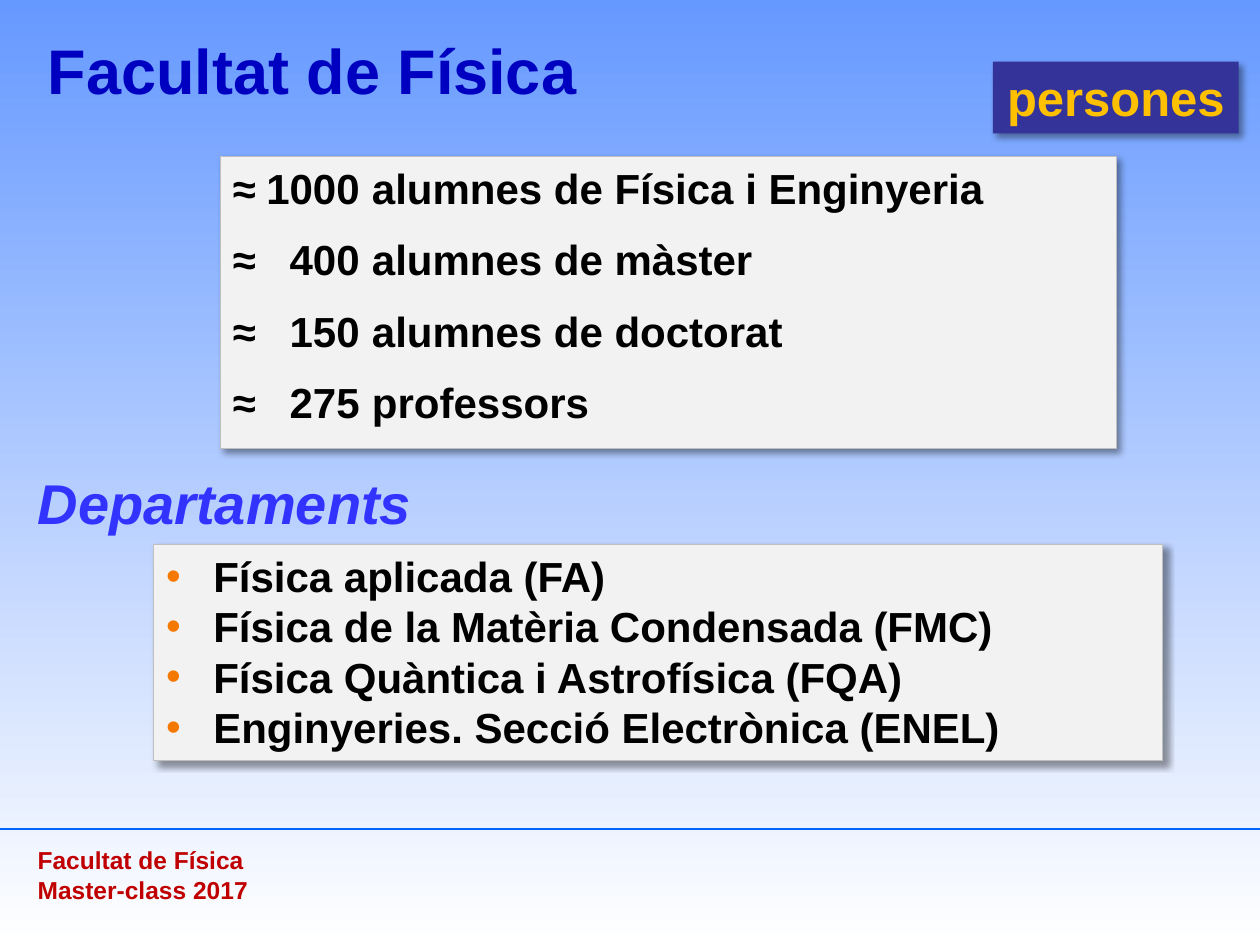
import pptx
import pptx.dml.color
import pptx.enum.shapes
import pptx.enum.text
import pptx.oxml
import pptx.oxml.ns
import pptx.util
from lxml import etree

Pt = pptx.util.Pt
ALIGN = pptx.enum.text.PP_ALIGN
NS = pptx.oxml.ns.nsdecls("a")
COLORS = {
    "sky": "6699FF", "white": "FFFFFF", "rule": "0066FF", "footer": "C00000",
    "title": "0000C0", "heading": "3333FF", "panel": "F2F2F2",
    "border": "BFBFBF", "text": "000000", "bullet": "F57900",
    "tag": "333399", "tag_text": "FFC000",
}
SHADOW = (
    f'<a:effectLst {NS}><a:outerShdw blurRad="{Pt(4)}" dist="{Pt(3)}" '
    'dir="2700000" algn="tl" rotWithShape="0"><a:srgbClr val="000000">'
    '<a:alpha val="40000"/></a:srgbClr></a:outerShdw></a:effectLst>'
)
BULLET = (
    f'<a:buClr {NS}><a:srgbClr val="{COLORS["bullet"]}"/></a:buClr>',
    f'<a:buFont {NS} typeface="Arial"/>',
    f'<a:buChar {NS} char="•"/>',
)
COUNT_TABS = (
    f'<a:tabLst {NS}><a:tab pos="{Pt(72.5)}" algn="r"/>'
    f'<a:tab pos="{Pt(79.5)}" algn="l"/></a:tabLst>',
)


def rgb(name):
    return pptx.dml.color.RGBColor.from_string(COLORS[name])


def write(shape, lines, size, color, italic=False, align=ALIGN.LEFT,
          gap=0, indent=0, extras=(), wrap=True):
    """Fill a shape with bold lines; extras are bullet or tab elements."""
    frame = shape.text_frame
    frame.text = "\n".join(lines)
    frame.word_wrap = wrap
    frame.auto_size = pptx.enum.text.MSO_AUTO_SIZE.NONE
    frame.vertical_anchor = pptx.enum.text.MSO_ANCHOR.TOP
    for number, paragraph in enumerate(frame.paragraphs):
        properties = paragraph._p.get_or_add_pPr()
        if indent:
            properties.set("marL", str(Pt(indent)))
            properties.set("indent", str(Pt(-indent)))
        for extra in extras:
            properties.append(etree.fromstring(extra))
        paragraph.alignment = align
        paragraph.space_before = Pt(gap if number else 0)
        for run in paragraph.runs:
            run.font.name = "Arial"
            run.font.size = Pt(size)
            run.font.bold = True
            run.font.italic = italic
            run.font.color.rgb = rgb(color)


presentation = pptx.Presentation()
presentation.slide_width = Pt(720)
presentation.slide_height = Pt(540)
slide = presentation.slides.add_slide(presentation.slide_layouts[5])

background = slide.background.fill
background.gradient()
background.gradient_angle = 270
for stop, name in zip(background.gradient_stops, ("sky", "white")):
    stop.color.rgb = rgb(name)

# Footer
rule = slide.shapes.add_connector(
    pptx.enum.shapes.MSO_CONNECTOR.STRAIGHT, Pt(0), Pt(473.8), Pt(720), Pt(473.8))
rule.line.color.rgb = rgb("rule")
rule.line.width = Pt(1.5)
rule._element.spPr.append(etree.fromstring(f"<a:effectLst {NS}/>"))

footer = slide.shapes.add_textbox(Pt(14.4), Pt(479.5), Pt(135.4), Pt(41))
write(footer, ["Facultat de Física", "Master-class 2017"], 14, "footer", wrap=False)

# Headings
title = slide.shapes.title
title.left, title.top, title.width, title.height = Pt(20.2), Pt(14.4), Pt(334.8), Pt(51)
write(title, ["Facultat de Física"], 36, "title")

departments_heading = slide.shapes.add_textbox(Pt(14.4), Pt(264.2), Pt(317.5), Pt(45.4))
write(departments_heading, ["Departaments"], 32, "heading", italic=True)

# Shadowed panels: people, departments, tag
panels = []
for left, top, width, height, fill, border in (
    (126, 89.3, 512, 167, "panel", "border"),
    (87.8, 311, 576.7, 123.8, "panel", "border"),
    (567.4, 35.3, 140.4, 41, "tag", None),
):
    panel = slide.shapes.add_shape(
        pptx.enum.shapes.MSO_SHAPE.RECTANGLE, Pt(left), Pt(top), Pt(width), Pt(height))
    panel.fill.solid()
    panel.fill.fore_color.rgb = rgb(fill)
    if border:
        panel.line.color.rgb = rgb(border)
        panel.line.width = Pt(0.75)
    else:
        panel.line.fill.background()
    panel._element.spPr.append(etree.fromstring(SHADOW))
    panels.append(panel)
people, departments, tag = panels

write(people, [
    "≈\t1000\talumnes de Física i Enginyeria",
    "≈\t400\talumnes de màster",
    "≈\t150\talumnes de doctorat",
    "≈\t275\tprofessors",
], 24, "text", gap=12, extras=COUNT_TABS)
write(departments, [
    "Física aplicada (FA)",
    "Física de la Matèria Condensada (FMC)",
    "Física Quàntica i Astrofísica (FQA)",
    "Enginyeries. Secció Electrònica (ENEL)",
], 24, "text", indent=27, extras=BULLET)
write(tag, ["persones"], 28, "tag_text", align=ALIGN.CENTER, wrap=False)

presentation.save("out.pptx")
